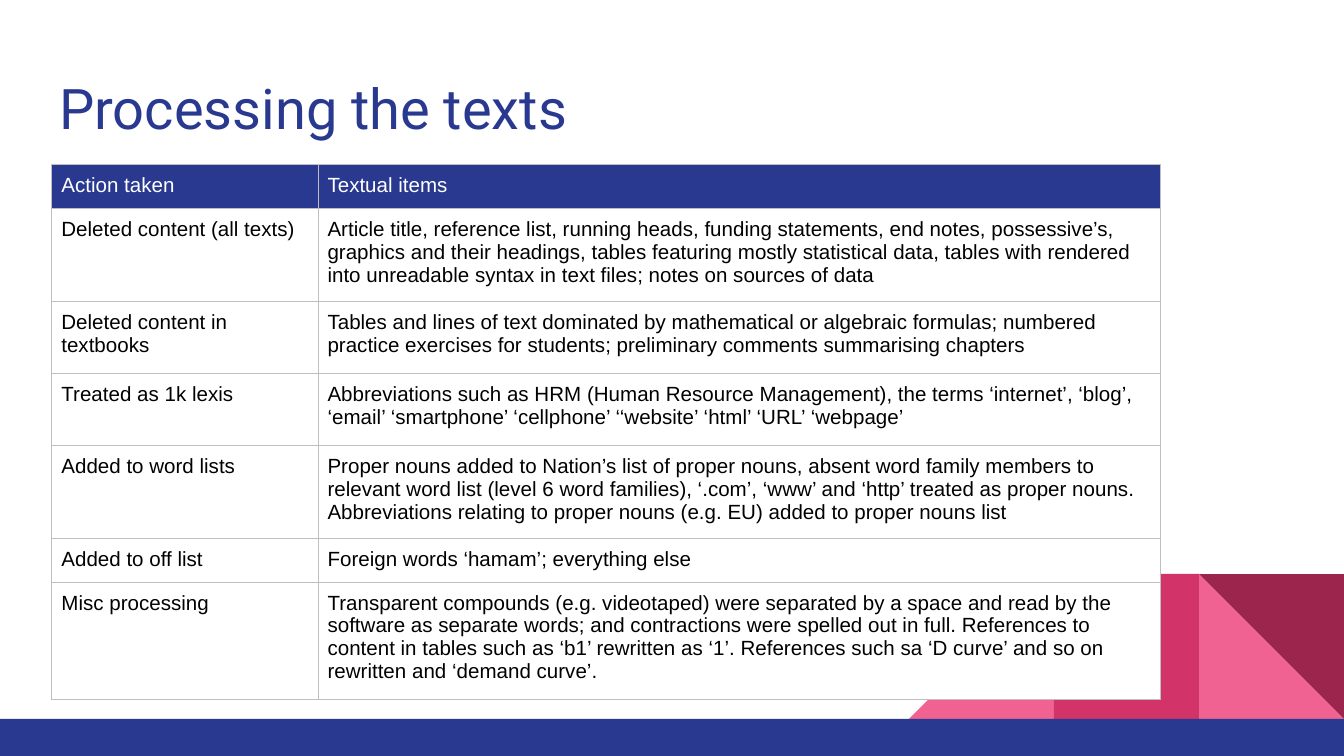
from dataclasses import dataclass

from lxml.etree import SubElement
from pptx import Presentation
from pptx.dml.color import RGBColor
from pptx.enum.shapes import MSO_SHAPE
from pptx.enum.text import MSO_ANCHOR
from pptx.oxml.ns import qn
from pptx.util import Cm, Pt


@dataclass(frozen=True)
class Theme:
    navy: str = "2A3990"
    light_pink: str = "F06292"
    pink: str = "D23369"
    dark_pink: str = "9C254D"
    white: str = "FFFFFF"
    black: str = "000000"
    border: str = "BFBFBF"
    title_font: str = "Roboto"
    body_font: str = "Arial"
    title_size: int = 30
    body_size: int = 11
    border_width: float = 0.5


THEME = Theme()

COLUMN_WIDTHS = (5.03, 15.93)
ROWS = (
    (0.78, "Action taken", "Textual items"),
    (1.72, "Deleted content (all texts)",
     "Article title, reference list, running heads, funding statements, end notes, "
     "possessive’s, graphics and their headings, tables featuring mostly statistical "
     "data, tables with rendered into unreadable syntax in text files; notes on "
     "sources of data"),
    (1.36, "Deleted content in textbooks",
     "Tables and lines of text dominated by mathematical or algebraic formulas; "
     "numbered practice exercises for students; preliminary comments summarising "
     "chapters"),
    (1.36, "Treated as 1k lexis",
     "Abbreviations such as HRM (Human Resource Management), the terms ‘internet’, "
     "‘blog’, ‘email’ ‘smartphone’ ‘cellphone’ ‘‘website’ ‘html’ ‘URL’ ‘webpage’"),
    (1.72, "Added to word lists",
     "Proper nouns added to Nation’s list of proper nouns, absent word family members "
     "to relevant word list (level 6 word families), ‘.com’, ‘www’ and ‘http’ treated "
     "as proper nouns. Abbreviations relating to proper nouns (e.g. EU) added to "
     "proper nouns list"),
    (0.78, "Added to off list", "Foreign words ‘hamam’; everything else"),
    (2.1, "Misc processing",
     "Transparent compounds (e.g. videotaped) were separated by a space and read by "
     "the software as separate words; and contractions were spelled out in full. "
     "References to content in tables such as ‘b1’ rewritten as ‘1’. References such "
     "sa ‘D curve’ and so on rewritten and ‘demand curve’."),
)


def style_paragraph(paragraph, font_name, size, color):
    paragraph.font.name = font_name
    paragraph.font.size = Pt(size)
    paragraph.font.color.rgb = RGBColor.from_string(color)


def add_block(slide, preset, left, top, width, height, color):
    shape = slide.shapes.add_shape(preset, Cm(left), Cm(top), Cm(width), Cm(height))
    shape.shadow.inherit = False
    shape.fill.solid()
    shape.fill.fore_color.rgb = RGBColor.from_string(color)
    shape.line.fill.background()
    return shape


def add_decoration(slide, left, top, width, height, side):
    bar_top = top + side
    right_column = left + width - side
    triangle, rectangle = MSO_SHAPE.RIGHT_TRIANGLE, MSO_SHAPE.RECTANGLE
    tiles = (
        (triangle, 0, THEME.light_pink, 0, False),
        (triangle, 2, THEME.light_pink, 0, True),
        (rectangle, 1, THEME.pink, 0, False),
        (triangle, 0, THEME.dark_pink, 180, False),
    )
    for preset, column, color, rotation, mirrored in tiles:
        tile = add_block(slide, preset, right_column - column * side, top,
                         side, side, color)
        tile.rotation = rotation
        if mirrored:
            tile._element.spPr.find(qn("a:xfrm")).set("flipH", "1")
    add_block(slide, rectangle, left, bar_top, width, height - side, THEME.navy)


def add_title(slide, left, top, width, height, text):
    title = slide.shapes.add_textbox(Cm(left), Cm(top), Cm(width), Cm(height))
    frame = title.text_frame
    frame.word_wrap = True
    frame.vertical_anchor = MSO_ANCHOR.TOP
    frame.margin_left = frame.margin_right = Cm(0.25)
    frame.margin_top = frame.margin_bottom = Cm(0.25)
    frame.text = text
    style_paragraph(frame.paragraphs[0], THEME.title_font, THEME.title_size, THEME.navy)


def set_borders(cell):
    properties = cell._tc.get_or_add_tcPr()
    for side in ("lnL", "lnR", "lnT", "lnB"):
        line = SubElement(properties, qn(f"a:{side}"), w=str(Pt(THEME.border_width)))
        fill = SubElement(line, qn("a:solidFill"))
        SubElement(fill, qn("a:srgbClr"), val=THEME.border)


def fill_cell(cell, text, text_color, fill_color):
    set_borders(cell)
    cell.fill.solid()
    cell.fill.fore_color.rgb = RGBColor.from_string(fill_color)
    cell.margin_left = cell.margin_right = Cm(0.18)
    cell.margin_top = cell.margin_bottom = Cm(0.18)
    cell.text = text
    style_paragraph(cell.text_frame.paragraphs[0], THEME.body_font,
                    THEME.body_size, text_color)


def add_processing_table(slide, left, top, column_widths, rows):
    height = sum(row[0] for row in rows)
    table = slide.shapes.add_table(
        len(rows), len(column_widths), Cm(left), Cm(top),
        Cm(sum(column_widths)), Cm(height)).table
    for column, width in zip(table.columns, column_widths):
        column.width = Cm(width)
    for index, (row_height, *texts) in enumerate(rows):
        table.rows[index].height = Cm(row_height)
        colors = (THEME.black, THEME.white) if index else (THEME.white, THEME.navy)
        for cell, text in zip(table.rows[index].cells, texts):
            fill_cell(cell, text, *colors)


def main():
    presentation = Presentation()
    presentation.slide_width = Cm(25.4)
    presentation.slide_height = Cm(14.29)
    slide = presentation.slides.add_slide(presentation.slide_layouts[6])
    add_decoration(slide, 0, 10.85, 25.4, 3.44, side=2.74)
    add_title(slide, 0.87, 1.15, 23.67, 1.67, "Processing the texts")
    add_processing_table(slide, 0.98, 3.11, COLUMN_WIDTHS, ROWS)
    presentation.save("out.pptx")


if __name__ == "__main__":
    main()
